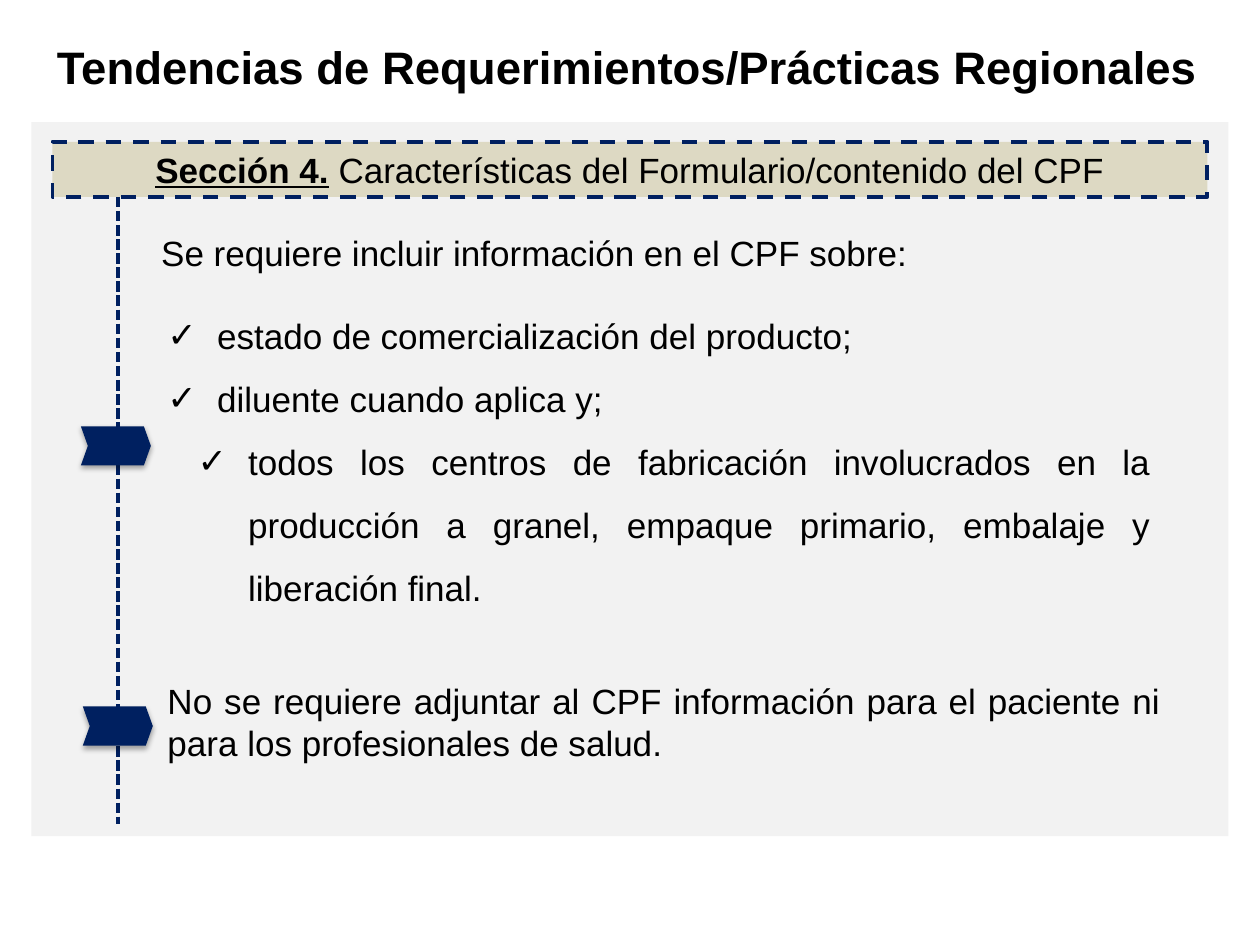
from lxml import etree
from pptx import Presentation
from pptx.dml.color import RGBColor
from pptx.enum import dml, shapes, text
from pptx.oxml import ns, parse_xml
from pptx.util import Pt

NAVY = "002060"


def color(value):
    return RGBColor.from_string(value)


def add_text(left, top, width, height, lines, size=20, bold=False,
             align=text.PP_ALIGN.JUSTIFY):
    box = slide.shapes.add_textbox(Pt(left), Pt(top), Pt(width), Pt(height))
    frame = box.text_frame
    frame.word_wrap = True
    frame.text = "\n".join(lines)
    for paragraph in frame.paragraphs:
        paragraph.alignment = align
        for run in paragraph.runs:
            run.font.name = "Arial"
            run.font.size = Pt(size)
            run.font.bold = bold
            run.font.color.rgb = color("000000")
    return frame


presentation = Presentation()
presentation.slide_width, presentation.slide_height = Pt(720), Pt(540)
slide = presentation.slides.add_slide(presentation.slide_layouts[6])

panel = slide.shapes.add_shape(shapes.MSO_SHAPE.RECTANGLE, Pt(18), Pt(69.8), Pt(684), Pt(408))
panel.shadow.inherit = False
panel.fill.solid()
panel.fill.fore_color.rgb = color("F2F2F2")
panel.line.fill.background()

header = slide.shapes.add_shape(shapes.MSO_SHAPE.RECTANGLE, Pt(30), Pt(81), Pt(660), Pt(31.5))
header.shadow.inherit = False
header.fill.solid()
header.fill.fore_color.rgb = color("DDD9C3")
header.line.color.rgb = color(NAVY)
header.line.width = Pt(2.25)
header.line.dash_style = dml.MSO_LINE.DASH
header.text_frame.word_wrap = True
paragraph = header.text_frame.paragraphs[0]
paragraph.alignment = text.PP_ALIGN.CENTER
for content, emphasis in (("Sección 4.", True),
                          (" Características del Formulario/contenido del CPF", False)):
    run = paragraph.add_run()
    run.text = content
    run.font.name = "Arial"
    run.font.size = Pt(20)
    run.font.bold = run.font.underline = emphasis
    run.font.color.rgb = color("000000")

timeline = slide.shapes.add_connector(
    shapes.MSO_CONNECTOR.STRAIGHT, Pt(67.5), Pt(112.5), Pt(67.5), Pt(471))
timeline.line.color.rgb = color(NAVY)
timeline.line.width = Pt(2)
timeline.line.dash_style = dml.MSO_LINE.SQUARE_DOT
etree.SubElement(timeline._element.spPr, ns.qn("a:effectLst"))

for left, top in ((46.2, 243.6), (47.3, 403.7)):
    builder = slide.shapes.build_freeform(Pt(left), Pt(top), scale=1.0)
    builder.add_line_segments([
        (Pt(left + x), Pt(top + y))
        for x, y in ((36, 0), (40, 11.2), (36, 22.4), (0, 22.4), (4, 11.2))])
    marker = builder.convert_to_shape()
    marker.fill.solid()
    marker.fill.fore_color.rgb = color(NAVY)
    marker.line.fill.background()
    marker._element.spPr.append(parse_xml(
        f'<a:effectLst {ns.nsdecls("a")}>'
        f'<a:outerShdw blurRad="{Pt(3.1)}" dist="{Pt(1.8)}" dir="5400000" rotWithShape="0">'
        '<a:srgbClr val="000000"><a:alpha val="35000"/></a:srgbClr>'
        '</a:outerShdw></a:effectLst>'))

requirements = add_text(85, 129, 579.6, 233, [
    "Se requiere incluir información en el CPF sobre:",
    "estado de comercialización del producto;",
    "diluente cuando aplica y;",
    "todos los centros de fabricación involucrados en la producción a granel, "
    "empaque primario, embalaje y liberación final.",
])
bullet_layout = ((32, -28.5, 1), (32, -28.5, 1.5), (49.7, -28.8, 1.5))
for paragraph, (margin, indent, spacing) in zip(requirements.paragraphs[1:], bullet_layout):
    properties = paragraph._p.get_or_add_pPr()
    properties.set("marL", str(Pt(margin)))
    properties.set("indent", str(Pt(indent)))
    etree.SubElement(properties, ns.qn("a:buFont"), typeface="Arial")
    etree.SubElement(properties, ns.qn("a:buChar"), char="✓")
    paragraph.line_spacing = float(spacing)
requirements.paragraphs[1].space_before = Pt(23)

add_text(88.6, 384.5, 581.8, 55.4, [
    "No se requiere adjuntar al CPF información para el paciente ni "
    "para los profesionales de salud."])

title = add_text(-1.4, 21.6, 720, 32.4,
                 ["Tendencias de Requerimientos/Prácticas Regionales"],
                 26, True, text.PP_ALIGN.CENTER)
title.vertical_anchor = text.MSO_ANCHOR.MIDDLE

presentation.save("out.pptx")
